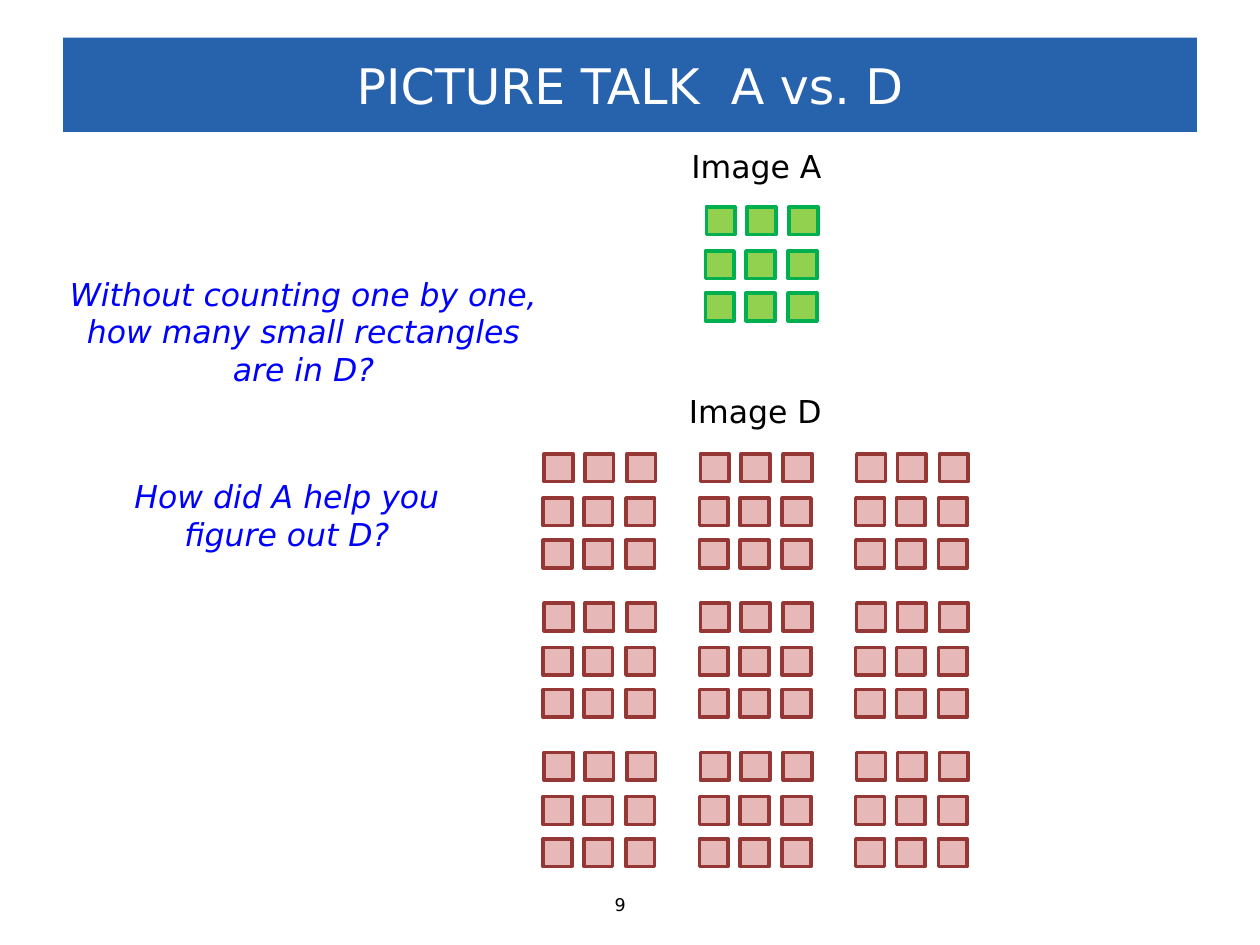
from itertools import product

from pptx import Presentation
from pptx.dml.color import RGBColor
from pptx.enum.shapes import MSO_SHAPE as SHAPE
from pptx.enum.text import MSO_ANCHOR as ANCHOR, MSO_AUTO_SIZE as AUTO, PP_ALIGN as ALIGN
from pptx.util import Cm, Pt


def rgb(value):
    return RGBColor.from_string(value)


class Deck:
    FONT = "DejaVu Sans"
    LABEL = {"size": Pt(18)}
    QUESTION = {"size": Pt(18), "italic": True}
    TILE = (0.58, 0.56)
    COLS = (0, 0.82, 1.67)
    ROWS = (0, 0.89, 1.74)
    TOP_ROW_SHIFT = 0.02

    def __init__(self, prs):
        self.s = prs.slides.add_slide(prs.slide_layouts[5])

    def add_words(self, sp, text, fmt, color, align):
        p = sp.text_frame.paragraphs[0]
        p.alignment = align
        r = p.add_run()
        r.text = text
        for name, value in {"name": self.FONT, **fmt}.items():
            setattr(r.font, name, value)
        r.font.color.rgb = rgb(color)

    def title(self, text, box):
        sp = self.s.shapes.title
        sp.left, sp.top, sp.width, sp.height = map(Cm, box)
        sp.fill.solid()
        sp.fill.fore_color.rgb = rgb("2762AD")
        tf = sp.text_frame
        tf.auto_size, tf.vertical_anchor = AUTO.NONE, ANCHOR.MIDDLE
        self.add_words(sp, text, {"size": Pt(28)}, "FFFFFF", ALIGN.CENTER)

    def group(self):
        return self.s.shapes.add_group_shape().shapes

    def text(self, shapes, text, box, fmt, color="000000", align=ALIGN.LEFT, wrap=False):
        sp = shapes.add_textbox(*map(Cm, box))
        tf = sp.text_frame
        tf.word_wrap, tf.auto_size = wrap, AUTO.SHAPE_TO_FIT_TEXT
        self.add_words(sp, text, fmt, color, align)

    def question(self, shapes, text, box):
        self.text(shapes, text, box, self.QUESTION, "0000FF", ALIGN.CENTER, True)

    def tile(self, shapes, x, y, fill, line):
        sp = shapes.add_shape(SHAPE.RECTANGLE, *map(Cm, (x, y, *self.TILE)))
        sp.shadow.inherit = False
        sp.fill.solid()
        sp.fill.fore_color.rgb = rgb(fill)
        sp.line.color.rgb = rgb(line)
        sp.line.width = Pt(2)

    def nine_tiles(self, shapes, left, top, fill, line):
        for dy, dx in product(self.ROWS, self.COLS):
            shift = self.TOP_ROW_SHIFT if dy == 0 else 0
            self.tile(shapes, left + dx + shift, top + dy, fill, line)


def main():
    prs = Presentation()
    prs.slide_width, prs.slide_height = Cm(25.4), Cm(19.05)
    deck = Deck(prs)
    shapes = deck.s.shapes

    # Heading and page number
    deck.title("PICTURE TALK  A vs. D", (1.27, 0.76, 22.86, 1.9))
    deck.text(shapes, "9", (12.14, 17.9, 1.12, 0.68), {"size": Pt(10)})

    # Image A: one block of nine
    deck.text(shapes, "Image A", (13.69, 2.84, 3.22, 1.03), deck.LABEL)
    deck.nine_tiles(deck.group(), 14.22, 4.17, "92D050", "00B050")

    # Questions and Image D: nine blocks of nine
    deck.question(shapes, "How did A help you figure out D?", (1.52, 9.5, 8.53, 1.8))
    image_d = deck.group()
    deck.question(image_d, "Without counting one by one, how many small rectangles are in D?",
                  (1.04, 5.41, 10.16, 2.57))
    deck.text(image_d, "Image D", (13.64, 7.77, 3.3, 1.03), deck.LABEL)
    for row, col in product(range(3), repeat=2):
        deck.nine_tiles(image_d, 10.95 + 3.15 * col, 9.15 + 3.01 * row, "E6B9B8", "953735")

    prs.save("out.pptx")


if __name__ == "__main__":
    main()
